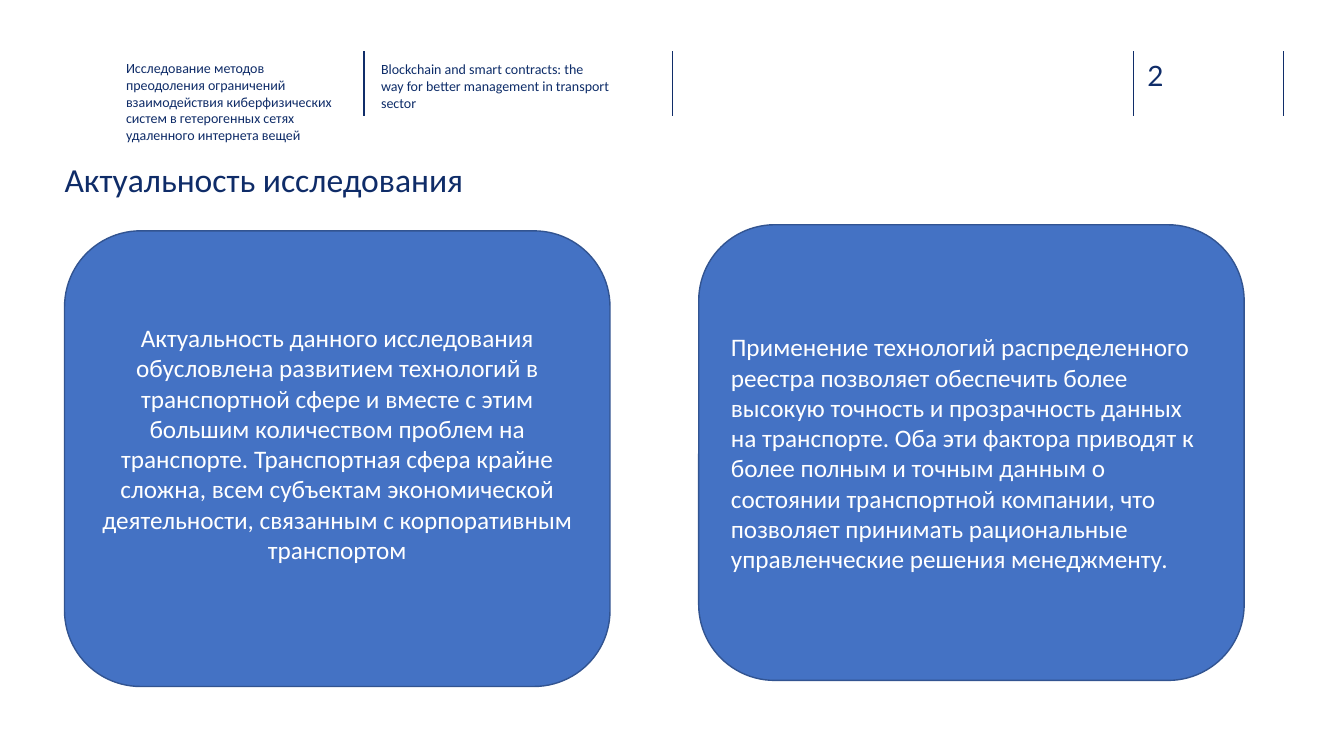
from lxml import etree
from pptx import Presentation
from pptx.dml.color import RGBColor
from pptx.enum.shapes import MSO_CONNECTOR, MSO_SHAPE
from pptx.enum.text import MSO_ANCHOR, MSO_AUTO_SIZE, PP_ALIGN
from pptx.oxml.ns import qn
from pptx.util import Pt

STRAIGHT = MSO_CONNECTOR.STRAIGHT
ROUNDED = MSO_SHAPE.ROUNDED_RECTANGLE
TOP, MIDDLE = MSO_ANCHOR.TOP, MSO_ANCHOR.MIDDLE
LEFT, CENTER = PP_ALIGN.LEFT, PP_ALIGN.CENTER
NO_FIT = MSO_AUTO_SIZE.NONE

EMU_PER_PX = 9144  # 100 px to the inch
TITLE_ONLY = 5
COLORS = {
    "rule": "102D69",
    "project": "0F2C68",
    "paper": "0E2D69",
    "card": "4472C4",
    "card_edge": "325491",
    "card_text": "FFFFFF",
}

PROJECT = (
    "Исследование методов преодоления ограничений взаимодействия "
    "киберфизических систем в гетерогенных сетях удаленного интернета вещей"
)
PAPER = (
    "Blockchain and smart contracts: the way for better management "
    "in transport sector"
)
TITLE = "Актуальность исследования"
RELEVANCE = (
    "Актуальность данного исследования обусловлена развитием технологий в "
    "транспортной сфере и вместе с этим большим количеством проблем на "
    "транспорте. Транспортная сфера крайне сложна, всем субъектам "
    "экономической деятельности, связанным с корпоративным транспортом"
)
BENEFIT = (
    "Применение технологий распределенного реестра позволяет обеспечить более "
    "высокую точность и прозрачность данных на транспорте. Оба эти фактора "
    "приводят к более полным и точным данным о состоянии транспортной "
    "компании, что позволяет принимать рациональные управленческие решения "
    "менеджменту."
)


def px(length):
    return length * EMU_PER_PX


def color(name):
    return RGBColor.from_string(COLORS[name])


def write(frame, text, size, color_name, font="Calibri", align=LEFT):
    frame.word_wrap = True
    frame.text = text
    para = frame.paragraphs[0]
    para.alignment = align
    for span in para.runs:
        span.font.name = font
        span.font.size = Pt(size)
        span.font.color.rgb = color(color_name)


def clear_margins(frame):
    frame.margin_left = frame.margin_right = 0
    frame.margin_top = frame.margin_bottom = 0
    frame.vertical_anchor = TOP
    frame.auto_size = NO_FIT


def add_rule(page, x):
    rule = page.shapes.add_connector(STRAIGHT, px(x), px(51), px(x), px(115))
    rule.line.color.rgb = color("rule")
    rule.line.width = Pt(1)
    etree.SubElement(rule._element.spPr, qn("a:effectLst"))


def add_label(page, area, text, size, color_name, font="Calibri"):
    box = page.shapes.add_textbox(*map(px, area))
    clear_margins(box.text_frame)
    write(box.text_frame, text, size, color_name, font)


def set_title(page, text):
    title = page.shapes.title
    title.left, title.top, title.width, title.height = map(
        px, (64, 158, 1209, 85))
    clear_margins(title.text_frame)
    write(title.text_frame, text, 24, "project")


def add_card(page, x, y, text, align, bottom_margin):
    card = page.shapes.add_shape(ROUNDED, px(x), px(y), px(541), px(452))
    card.shadow.inherit = False
    card.fill.solid()
    card.fill.fore_color.rgb = color("card")
    card.line.color.rgb = color("card_edge")
    card.line.width = Pt(1)
    card.text_frame.vertical_anchor = MIDDLE
    card.text_frame.margin_bottom = px(bottom_margin)
    write(card.text_frame, text, 18, "card_text", align=align)


def main():
    deck = Presentation()
    deck.slide_width, deck.slide_height = px(1333), px(750)
    page = deck.slides.add_slide(deck.slide_layouts[TITLE_ONLY])

    # Header strip
    for x in (361, 667, 1124, 1273):
        add_rule(page, x)
    add_label(page, (1138, 58, 73, 34), "2", 20, "rule", "Lato")
    add_label(page, (125, 59, 208, 45), PROJECT, 10, "project")
    add_label(page, (378, 60, 226, 45), PAPER, 10, "paper")

    # Title and the two cards; the first card's text sits above the middle
    set_title(page, TITLE)
    add_card(page, 64, 229, RELEVANCE, CENTER, 35)
    add_card(page, 693, 223, BENEFIT, LEFT, 5)

    deck.save("out.pptx")


if __name__ == "__main__":
    main()
